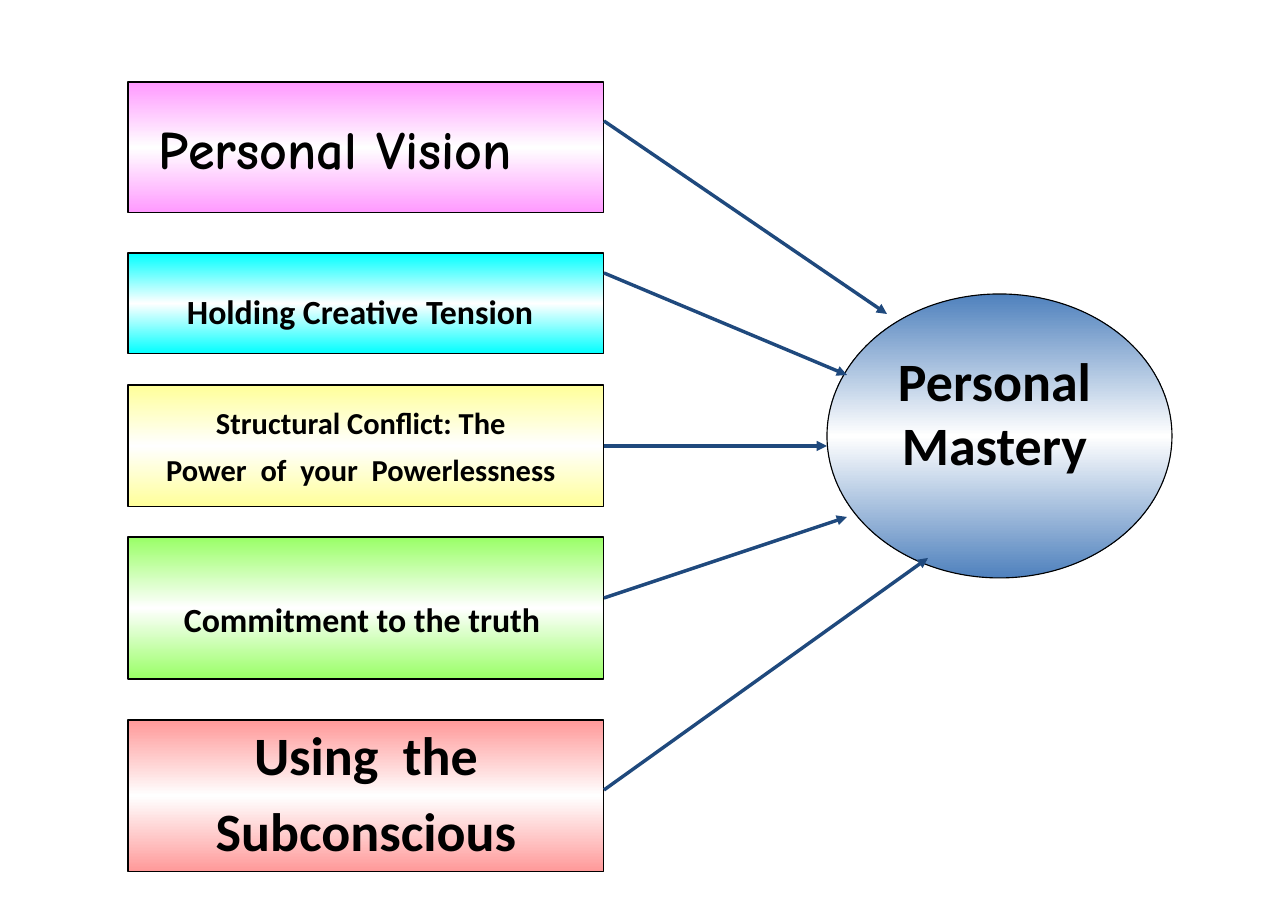
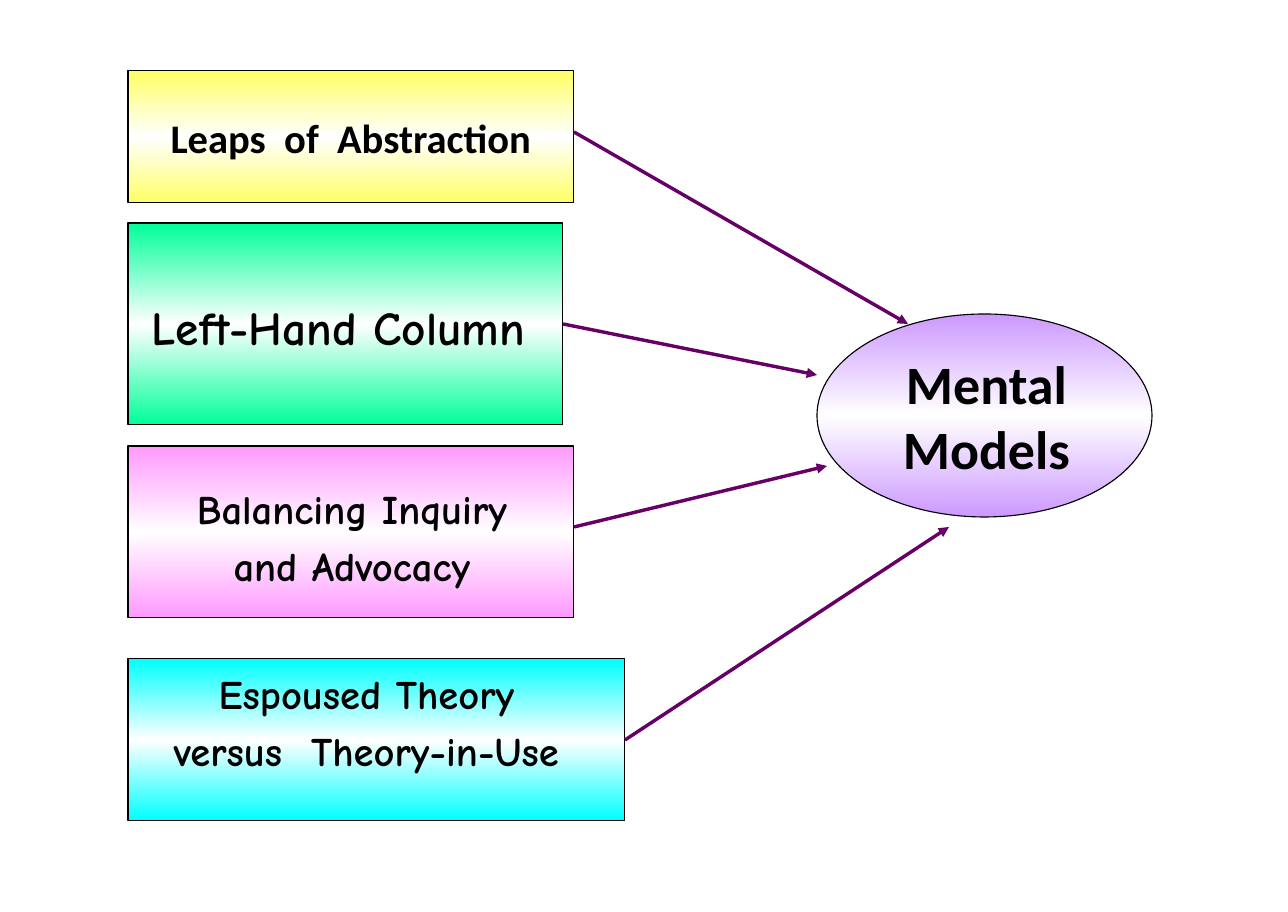
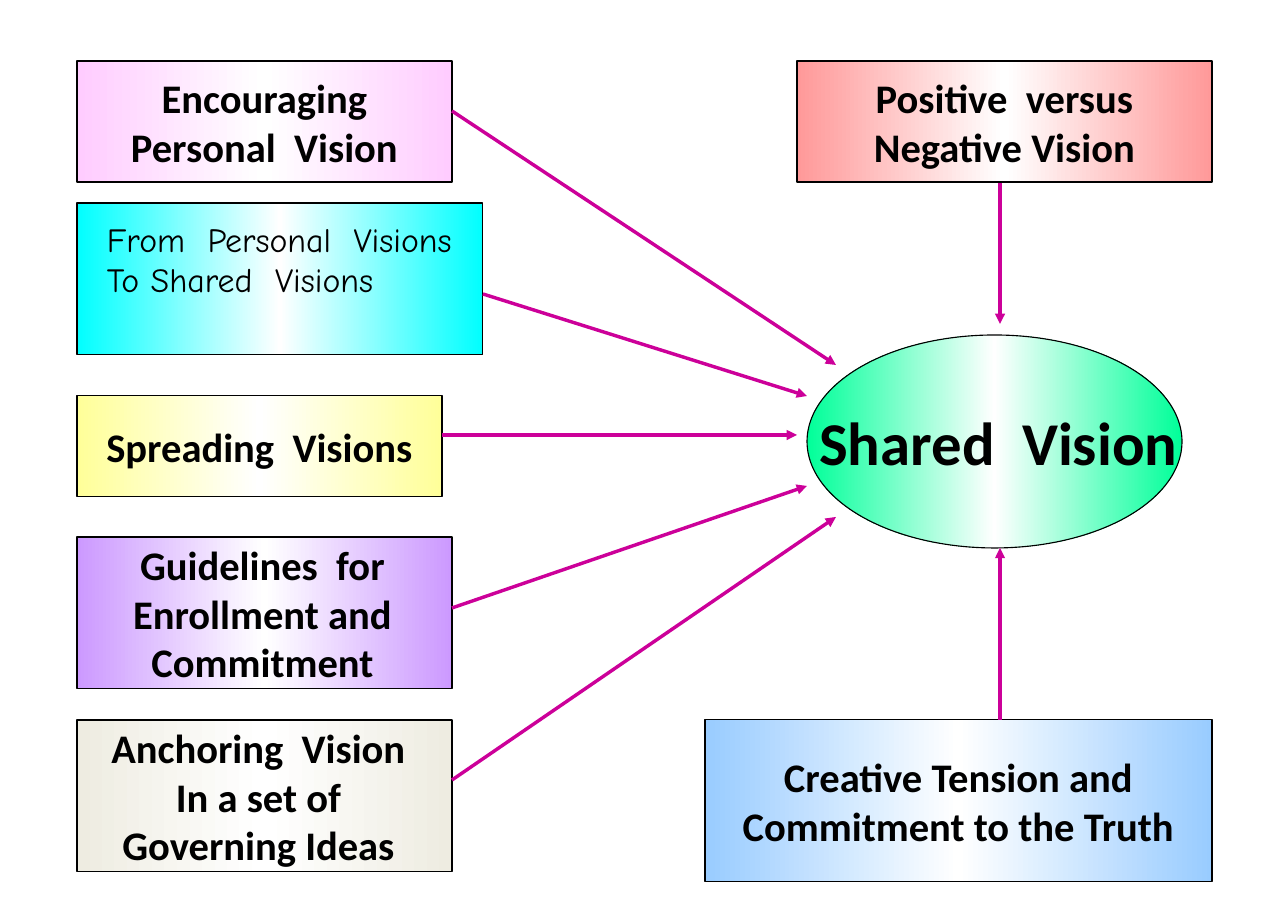
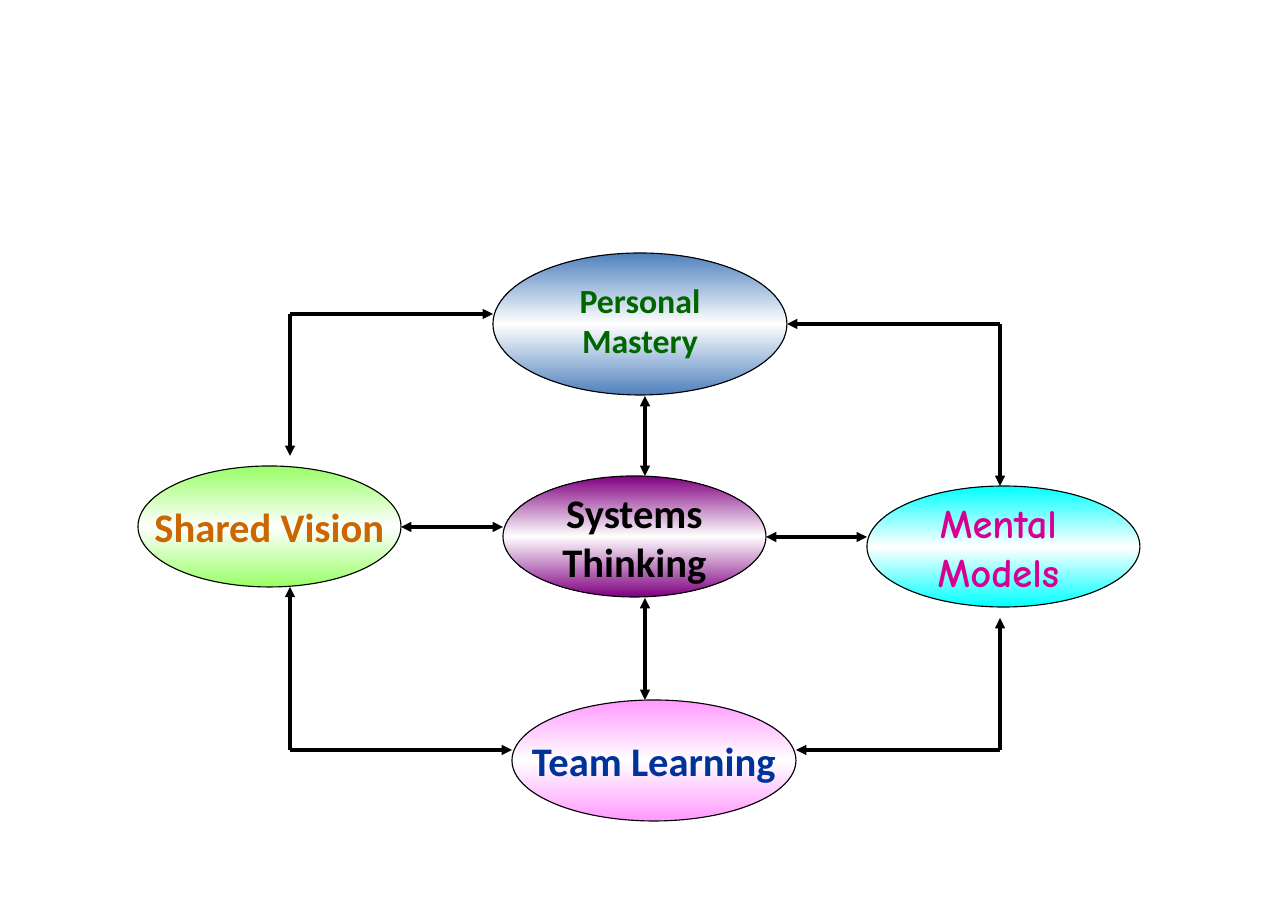
from copy import deepcopy
from lxml.etree import SubElement
from pptx import Presentation
from pptx.dml.color import RGBColor
from pptx.enum.shapes import MSO_CONNECTOR, MSO_SHAPE
from pptx.enum.text import MSO_ANCHOR, PP_ALIGN
from pptx.oxml.ns import qn
from pptx.util import Emu, Pt

SCALE = 914400 / 110.2  # EMU in one px
WIDE, HIGH = 1288, 912
BLACK, WHITE = "000000", "FFFFFF"
SANS, COMIC = "Calibri", "Comic Neue"
RECT, OVAL = MSO_SHAPE.RECTANGLE, MSO_SHAPE.OVAL
BASE = {"kind": RECT, "font": SANS, "size": 26.5, "ink": BLACK, "bold": True,
        "gap": 0, "dx": 0, "dy": 0, "left": False}

# Nodes: place (left, top, width, height), edge colour, lines, what differs from BASE.
# gap is space between lines in points; dx and dy move the text, in px.
# Arrows: x and y of the start, x and y of the end.
MASTERY = {
    "angle": 90, "ink": "1F497D",
    "nodes": [
        ((827, 294, 345, 284), "4F81BD", ["Personal", "Mastery"],
         {"kind": OVAL, "size": 35.3, "dx": -5, "dy": -24}),
        ((128, 82, 476, 131), "FF99FF", ["Personal Vision"],
         {"font": COMIC, "size": 35.3, "dx": -31}),
        ((128, 253, 476, 101), "00FFFF", ["Holding Creative Tension"],
         {"size": 22.1, "dx": -6, "dy": 8}),
        ((128, 385, 476, 122), "FFFF99",
         ["Structural Conflict: The", "Power  of  your  Powerlessness"],
         {"size": 19.9, "gap": 6.5, "dx": -5}),
        ((128, 537, 476, 142), "99FF66", ["Commitment to the truth"],
         {"size": 22.1, "dx": -4, "dy": 11}),
        ((128, 720, 476, 152), "FF9999", ["Using  the", "Subconscious"],
         {"size": 35.3, "gap": 7, "dy": -4}),
    ],
    "arrows": [(604, 446, 827, 446), (604, 273, 847, 375), (604, 121, 887, 314),
               (604, 598, 847, 517), (604, 790, 928, 558)],
}

MODELS = {
    "angle": 90, "ink": "660066",
    "nodes": [
        ((128, 71, 446, 132), "FFFF66", ["Leaps  of  Abstraction"], {}),
        ((128, 223, 435, 202), "00FF99", ["Left-Hand Column"],
         {"font": COMIC, "size": 30.9, "dx": -7, "dy": 3}),
        ((128, 446, 446, 172), "FF99FF", ["Balancing Inquiry", "and Advocacy"],
         {"font": COMIC, "gap": 5.3, "dx": 1, "dy": 5}),
        ((128, 659, 497, 162), "00FFFF",
         ["Espoused Theory", "versus  Theory-in-Use"],
         {"font": COMIC, "gap": 5.3, "dx": -10, "dy": -18}),
        ((817, 314, 335, 203), "CC99FF", ["Mental", "Models"],
         {"kind": OVAL, "size": 35.3, "dx": 2}),
    ],
    "arrows": [(574, 132, 908, 324), (563, 324, 817, 375),
               (574, 527, 827, 466), (625, 740, 949, 527)],
}

VISION = {
    "angle": 0, "ink": "CC0099",
    "nodes": [
        ((807, 335, 375, 213), "00FF99", ["Shared  Vision"],
         {"kind": OVAL, "size": 39.7, "dx": 4}),
        ((77, 61, 375, 121), "FFCCFF", ["Encouraging", "Personal  Vision"], {}),
        ((77, 203, 406, 152), "00FFFF",
         ["From  Personal  Visions", "To Shared  Visions"],
         {"font": COMIC, "size": 22.1, "bold": False, "left": True,
          "dx": 15, "dy": -20}),
        ((77, 396, 365, 101), "FFFF99", ["Spreading  Visions"], {}),
        ((77, 537, 375, 152), "CC99FF",
         ["Guidelines  for", "Enrollment and", "Commitment"], {"dx": -2}),
        ((77, 720, 375, 152), "EEECE1",
         ["Anchoring  Vision", "In a set of", "Governing Ideas"], {"dx": -6}),
        ((705, 720, 507, 162), "99CCFF",
         ["Creative Tension and", "Commitment to the Truth"], {}),
        ((797, 61, 415, 121), "FF9999", ["Positive  versus", "Negative Vision"], {}),
    ],
    "arrows": [(442, 435, 797, 435), (483, 294, 807, 396), (452, 111, 836, 365),
               (1000, 183, 1000, 324), (1000, 720, 1000, 548),
               (452, 608, 807, 486), (452, 780, 836, 517)],
}

# Elbows: corner x and y, then where the flat and the upright arm end.
ELBOWS = [(290, 750, 512, 587), (290, 314, 493, 456),
          (1000, 324, 787, 486), (1000, 750, 796, 618)]
SYSTEM = {
    "angle": 90, "ink": BLACK,
    "nodes": [
        ((503, 476, 263, 121), "800080", ["Systems", "Thinking"], {"kind": OVAL}),
        ((493, 253, 294, 142), "4F81BD", ["Personal", "Mastery"],
         {"kind": OVAL, "size": 22.1, "ink": "006600", "dy": -4}),
        ((138, 466, 263, 121), "99FF66", ["Shared Vision"],
         {"kind": OVAL, "ink": "CC6600"}),
        ((867, 486, 273, 121), "00FFFF", ["Mental", "Models"],
         {"kind": OVAL, "font": COMIC, "ink": "D60093", "dx": -5}),
        ((512, 700, 284, 121), "FF99FF", ["Team Learning"],
         {"kind": OVAL, "ink": "003399"}),
    ],
    "arrows": [arm for x, y, flat, up in ELBOWS
               for arm in ((x, y, flat, y), (x, y, x, up))],
    "pairs": [(645, 598, 645, 700), (645, 396, 645, 476),
              (401, 527, 503, 527), (766, 537, 867, 537)],
}


def px(num):
    return Emu(round(num * SCALE))


def rgb(code):
    return RGBColor.from_string(code)


def shade(shape, code, angle):
    """Fill from the colour through white and back."""
    fill = shape.fill
    fill.gradient()
    fill.gradient_angle = angle
    first, mid = fill.gradient_stops
    first.color.rgb, first.position = rgb(code), 0
    mid.color.rgb, mid.position = rgb(WHITE), 0.5
    stops = shape._element.spPr.find(qn("a:gradFill")).find(qn("a:gsLst"))
    last = deepcopy(stops[0])
    last.set("pos", "100000")
    stops.append(last)


def write(shape, lines, look):
    frame = shape.text_frame
    frame.word_wrap = look["left"]
    frame.vertical_anchor = MSO_ANCHOR.MIDDLE
    # An inset on one side moves the text by half its size
    dx, dy = look["dx"], look["dy"]
    frame.margin_left, frame.margin_right = px(max(2 * dx, 0)), px(max(-2 * dx, 0))
    frame.margin_top, frame.margin_bottom = px(max(2 * dy, 0)), px(max(-2 * dy, 0))
    for num, line in enumerate(lines):
        para = frame.add_paragraph() if num else frame.paragraphs[0]
        para.text = line
        para.alignment = PP_ALIGN.LEFT if look["left"] else PP_ALIGN.CENTER
        para.space_before = Pt(look["gap"] if num else 0)
        font = para.font
        font.name, font.size, font.bold = look["font"], Pt(look["size"]), look["bold"]
        font.color.rgb = rgb(look["ink"])


def add_node(slide, place, code, lines, look, angle):
    shape = slide.shapes.add_shape(look["kind"], *map(px, place))
    shape.shadow.inherit = False
    shade(shape, code, angle)
    shape.line.color.rgb = rgb(BLACK)
    shape.line.width = Pt(0.75)
    write(shape, lines, look)
    return shape


def add_arrow(slide, ends, ink, heads):
    line = slide.shapes.add_connector(MSO_CONNECTOR.STRAIGHT, *map(px, ends))
    line.line.color.rgb = rgb(ink)
    line.line.width = Pt(2.25)
    for tag in heads:
        SubElement(line.line._get_or_add_ln(), qn(tag), type="triangle")
    SubElement(line._element.spPr, qn("a:effectLst"))
    return line


def build(deck, page):
    slide = deck.slides.add_slide(deck.slide_layouts[6])
    sides = {}  # middle of each rectangle's right side
    for place, code, lines, extra in page["nodes"]:
        look = {**BASE, **extra}
        shape = add_node(slide, place, code, lines, look, page["angle"])
        if look["kind"] == RECT:
            x, y, wide, high = place
            sides[x + wide, y + high / 2] = shape
    for ends in page["arrows"]:
        line = add_arrow(slide, ends, page["ink"], ["a:tailEnd"])
        if ends[:2] in sides:
            line.begin_connect(sides[ends[:2]], 3)
    for ends in page.get("pairs", []):
        add_arrow(slide, ends, page["ink"], ["a:headEnd", "a:tailEnd"])


def main():
    deck = Presentation()
    deck.slide_width, deck.slide_height = px(WIDE), px(HIGH)
    for page in (MASTERY, MODELS, VISION, SYSTEM):
        build(deck, page)
    deck.save("out.pptx")


if __name__ == "__main__":
    main()
